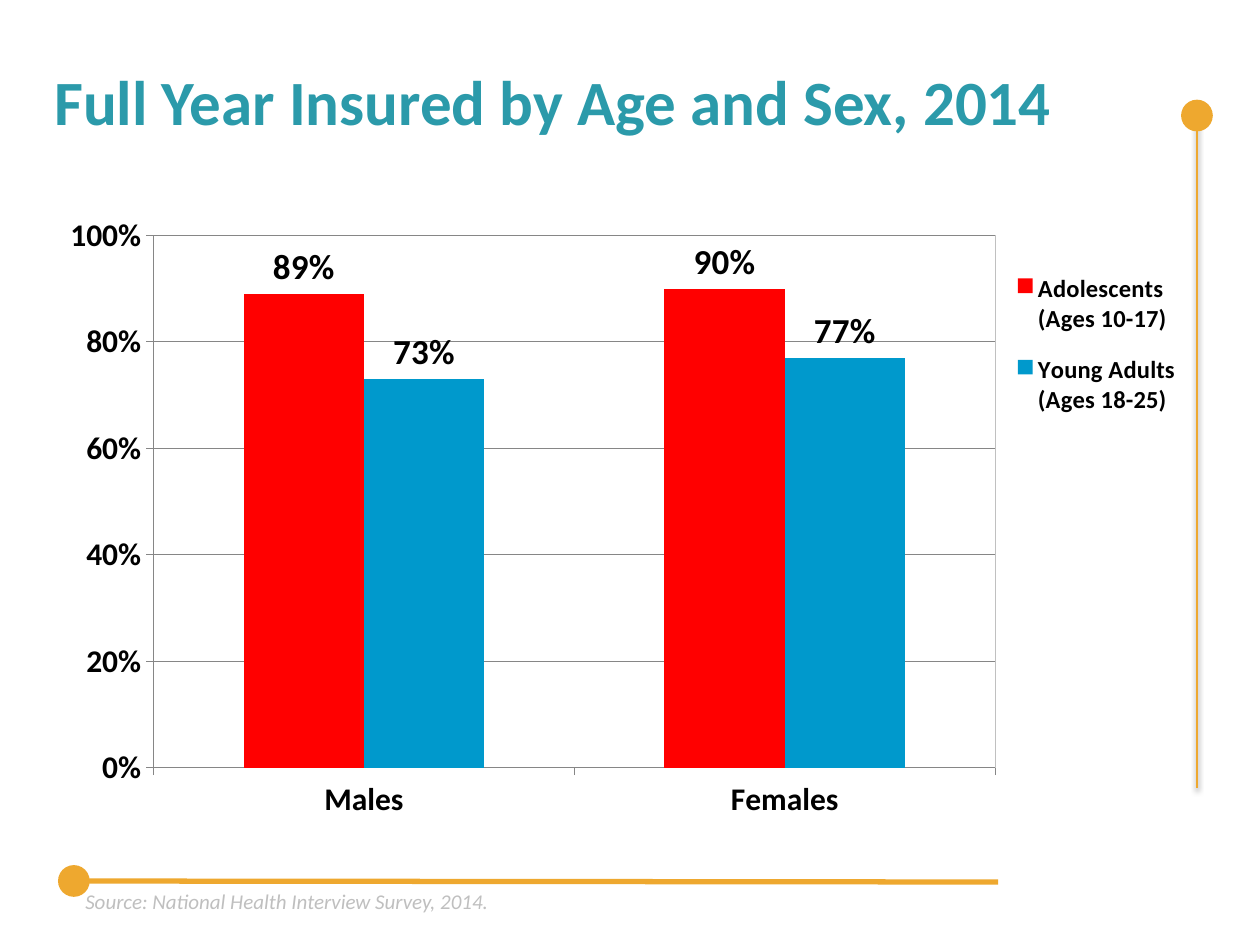
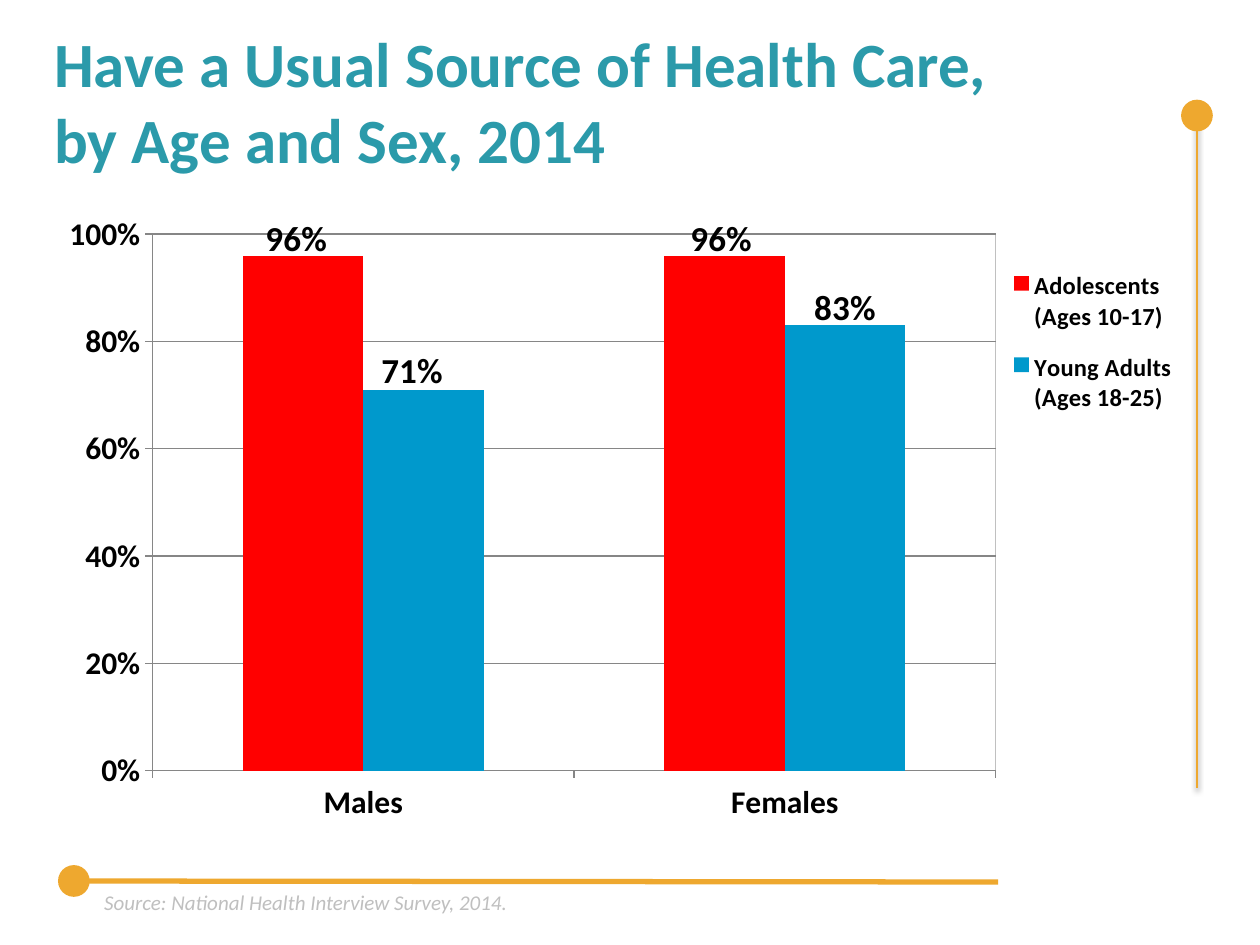
from lxml import etree
from pptx import Presentation
from pptx.chart.data import CategoryChartData
from pptx.dml.color import RGBColor
from pptx.enum.chart import XL_CHART_TYPE, XL_LABEL_POSITION, XL_LEGEND_POSITION, XL_TICK_MARK
from pptx.enum.shapes import MSO_CONNECTOR, MSO_SHAPE
from pptx.enum.text import MSO_ANCHOR, MSO_AUTO_SIZE, PP_ALIGN
from pptx.oxml import parse_xml
from pptx.oxml.ns import nsdecls, qn
from pptx.util import Cm, Pt

FONT = "Calibri"
TEAL = RGBColor(0x2B, 0x9A, 0xAA)
GOLD = RGBColor(0xEE, 0xA8, 0x2F)
RED = RGBColor(0xFF, 0x00, 0x00)
BLUE = RGBColor(0x00, 0x99, 0xCC)
BLACK = RGBColor(0x00, 0x00, 0x00)
AXIS_GREY = RGBColor(0x86, 0x86, 0x86)
SOURCE_GREY = RGBColor(0xBF, 0xBF, 0xBF)

TITLE_BOX = (0.84, 0.43, 22.86, 3.18)
BALL = 0.64
SEXES = ("Males", "Females")
AGE_GROUPS = (("Adolescents (Ages 10-17)", RED), ("Young Adults (Ages 18-25)", BLUE))
SOURCE = "Source: National Health Interview Survey, 2014."


def style_font(font, size, color, bold=False, italic=False):
    font.name, font.size = FONT, Pt(size)
    font.bold, font.italic = bold, italic
    font.color.rgb = color


def add_title(slide, text, box):
    title = slide.shapes.title
    title.left, title.top, title.width, title.height = map(Cm, box)
    frame = title.text_frame
    frame.text = text
    frame.word_wrap = True
    frame.auto_size = MSO_AUTO_SIZE.NONE
    frame.vertical_anchor = MSO_ANCHOR.MIDDLE
    paragraph = frame.paragraphs[0]
    paragraph.alignment = PP_ALIGN.LEFT
    style_font(paragraph.font, 36, TEAL, bold=True)


def add_pin(slide, ball_center, tip, width, shadowed=False):
    """Draw a gold rule that starts at a round head."""
    x, y = ball_center
    rule = slide.shapes.add_connector(MSO_CONNECTOR.STRAIGHT, *map(Cm, (*ball_center, *tip)))
    rule.line.color.rgb = GOLD
    rule.line.width = Pt(width)
    effects = etree.SubElement(rule._element.spPr, qn("a:effectLst"))
    if shadowed:
        effects.append(parse_xml(
            f'<a:outerShdw {nsdecls("a")} blurRad="{Pt(3.1)}" dist="{Pt(1.6)}" dir="5400000">'
            '<a:srgbClr val="000000"><a:alpha val="38000"/></a:srgbClr></a:outerShdw>'))
    ball = slide.shapes.add_shape(
        MSO_SHAPE.OVAL, *map(Cm, (x - BALL / 2, y - BALL / 2, BALL, BALL)))
    ball.shadow.inherit = False
    ball.fill.solid()
    ball.fill.fore_color.rgb = GOLD
    ball.line.fill.background()


def add_source(slide, left, top):
    source = slide.shapes.add_textbox(Cm(left), Cm(top), Cm(14.78), Cm(0.76))
    source.text_frame.word_wrap = True
    paragraph = source.text_frame.paragraphs[0]
    paragraph.text = SOURCE
    style_font(paragraph.font, 12, SOURCE_GREY, italic=True)


def manual_layout(x, y, w=None, h=None, inner=False):
    """Return a c:layout; without a size, x and y shift from the automatic place."""
    parts = []
    if inner:
        parts.append('<c:layoutTarget val="inner"/>')
    if w is not None:
        parts.append('<c:xMode val="edge"/><c:yMode val="edge"/>')
    for tag, value in zip("xywh", (x, y, w, h)):
        if value is not None:
            parts.append(f'<c:{tag} val="{value}"/>')
    return parse_xml(f'<c:layout {nsdecls("c")}><c:manualLayout>{"".join(parts)}'
                     '</c:manualLayout></c:layout>')


def style_axes(chart):
    for axis in (chart.category_axis, chart.value_axis):
        axis.major_tick_mark = XL_TICK_MARK.OUTSIDE
        axis.minor_tick_mark = XL_TICK_MARK.NONE
        axis.format.line.color.rgb = AXIS_GREY
        style_font(axis.tick_labels.font, 18, BLACK, bold=True)
    scale = chart.value_axis
    scale.minimum_scale, scale.maximum_scale, scale.major_unit = 0, 1, 0.2
    scale.major_gridlines.format.line.color.rgb = AXIS_GREY
    scale.tick_labels.number_format = "0%"
    scale.tick_labels.number_format_is_linked = False


def style_series(series, color, label_shifts):
    series.format.fill.solid()
    series.format.fill.fore_color.rgb = color
    labels = series.data_labels
    labels.show_value = True
    labels.number_format, labels.number_format_is_linked = "0%", False
    labels.position = XL_LABEL_POSITION.OUTSIDE_END
    style_font(labels.font, 20, BLACK, bold=True)
    for index, shift in enumerate(label_shifts):
        label = series.points[index].data_label
        style_font(label.font, 20, BLACK, bold=True)
        label.position = XL_LABEL_POSITION.OUTSIDE_END
        entry = labels._element.findall(qn("c:dLbl"))[index]
        entry.find(qn("c:idx")).addnext(manual_layout(*shift))


def add_insurance_chart(slide, box, rates, plot, legend_place, label_shifts):
    data = CategoryChartData(number_format="0%")
    data.categories = SEXES
    for (name, _), values in zip(AGE_GROUPS, rates):
        data.add_series(name, values)
    chart = slide.shapes.add_chart(XL_CHART_TYPE.COLUMN_CLUSTERED, *map(Cm, box), data).chart
    style_font(chart.font, 18, BLACK)
    chart.has_title = False
    style_axes(chart)

    columns = chart.plots[0]
    columns.gap_width, columns.overlap = 150, 0
    columns.vary_by_categories = False
    for series, (_, color), shifts in zip(columns.series, AGE_GROUPS, label_shifts):
        style_series(series, color, shifts)

    chart.has_legend = True
    legend = chart.legend
    legend.position = XL_LEGEND_POSITION.RIGHT
    legend.include_in_layout = False
    style_font(legend.font, 14, BLACK, bold=True)
    legend_xml = legend._element
    for automatic in legend_xml.findall(qn("c:layout")):
        legend_xml.remove(automatic)
    legend_xml.find(qn("c:legendPos")).addnext(manual_layout(*legend_place))

    plot_area = chart._chartSpace.chart.plotArea
    for automatic in plot_area.findall(qn("c:layout")):
        plot_area.remove(automatic)
    plot_area.insert(0, manual_layout(*plot, inner=True))
    plot_area.append(parse_xml(
        f'<c:spPr {nsdecls("c", "a")}><a:noFill/><a:ln w="{Pt(0.75)}"><a:solidFill>'
        '<a:srgbClr val="C0C0C0"/></a:solidFill></a:ln></c:spPr>'))


def add_chart_slide(deck, title, source_at, **chart_parts):
    slide = deck.slides.add_slide(deck.slide_layouts[5])
    add_pin(slide, (24.13, 2.33), (24.13, 15.88), 1.5, shadowed=True)
    add_pin(slide, (1.49, 17.76), (20.12, 17.78), 3)
    add_insurance_chart(slide, **chart_parts)
    add_title(slide, title, TITLE_BOX)
    add_source(slide, *source_at)


def main():
    deck = Presentation()
    deck.slide_width, deck.slide_height = Cm(25.4), Cm(19.05)
    add_chart_slide(
        deck, "Full Year Insured by Age and Sex, 2014", (1.47, 17.78),
        box=(0.84, 3.94, 23.5, 12.78),
        rates=((0.89, 0.9), (0.73, 0.77)),
        plot=(0.096, 0.063, 0.722, 0.84),
        legend_place=(0.825, 0.09, 0.16, 0.29),
        label_shifts=((), ()))
    add_chart_slide(
        deck, "Have a Usual Source of Health Care,\vby Age and Sex, 2014", (1.85, 17.81),
        box=(0.84, 3.94, 23.06, 13),
        rates=((0.96, 0.96), (0.71, 0.83)),
        plot=(0.097, 0.06, 0.737, 0.832),
        legend_place=(0.839, 0.085, 0.16, 0.285),
        label_shifts=(((-0.006, 0.015), (-0.003, 0.015)), ((-0.01, 0.012), (0, 0.014))))
    deck.save("out.pptx")


if __name__ == "__main__":
    main()
